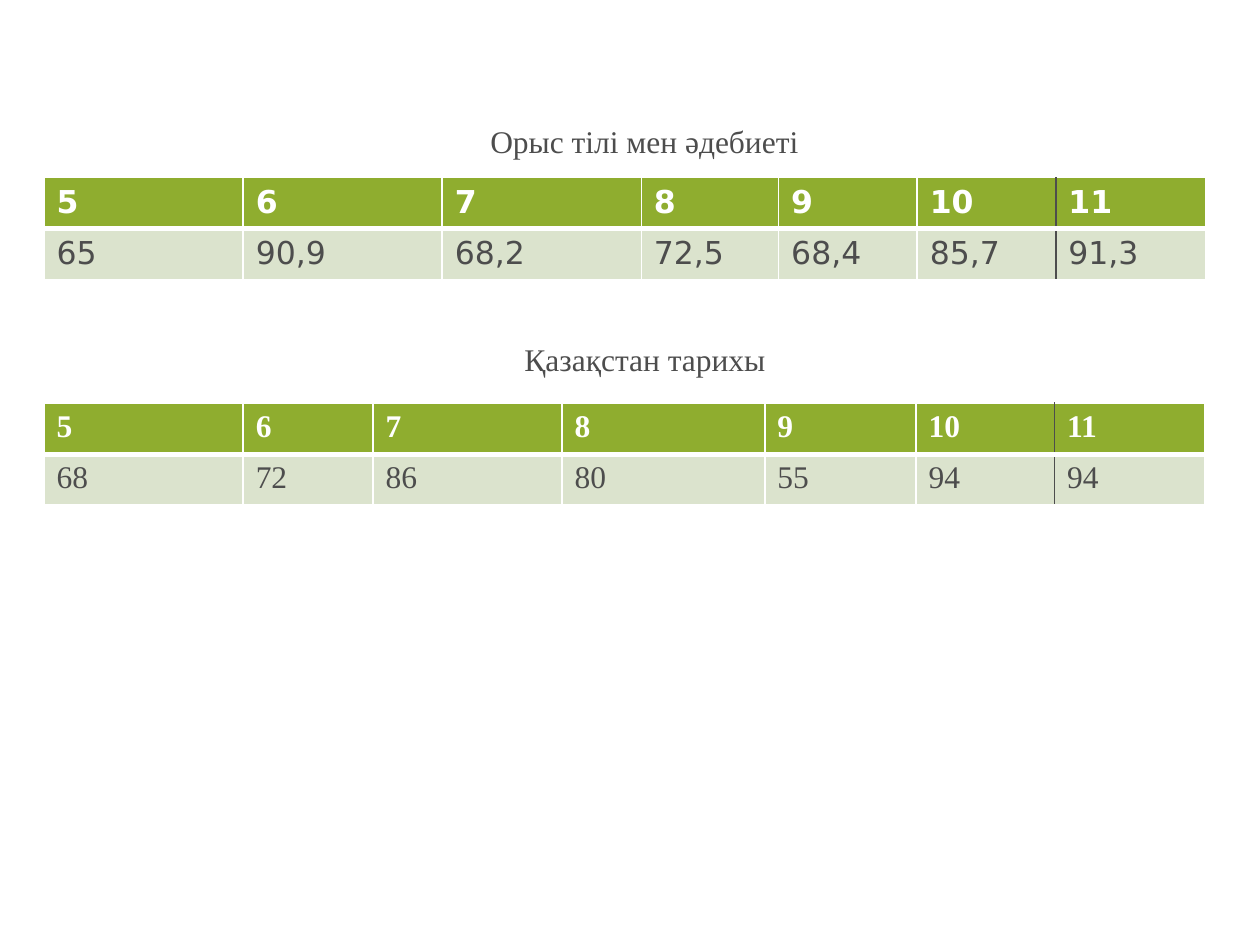
from pptx import Presentation
from pptx.dml.color import RGBColor
from pptx.enum.text import MSO_AUTO_SIZE, PP_ALIGN
from pptx.oxml.ns import qn
from pptx.util import Inches, Pt
from lxml import etree

CENTER = PP_ALIGN.CENTER
FIT_SHAPE = MSO_AUTO_SIZE.SHAPE_TO_FIT_TEXT
WHITE = RGBColor(0xFF, 0xFF, 0xFF)
GRAY = RGBColor(0x4D, 0x4D, 0x4D)
GREEN = RGBColor(0x8F, 0xAD, 0x2F)
PALE = RGBColor(0xDB, 0xE3, 0xCD)
SERIF = "Times New Roman"
SANS = "DejaVu Sans"

GRADES = ["5", "6", "7", "8", "9", "10", "11"]
SUBJECTS = [
    {
        "title": "Орыс тілі мен әдебиеті",
        "title_box": (3.58, 0.92, 3.07, 0.4),
        "top": 1.41,
        "font": SANS,
        "widths": [1.58, 1.58, 1.58, 1.09, 1.1, 1.1, 1.19],
        "scores": ["65", "90,9", "68,2", "72,5", "68,4", "85,7", "91,3"],
    },
    {
        "title": "Қазақстан тарихы",
        "title_box": (3.48, 2.65, 3.28, 0.4),
        "top": 3.2,
        "font": SERIF,
        "widths": [1.58, 1.03, 1.5, 1.61, 1.2, 1.1, 1.19],
        "scores": ["68", "72", "86", "80", "55", "94", "94"],
    },
]
ROW_STYLES = [
    {"fill": GREEN, "color": WHITE, "bold": True, "bottom": 3},
    {"fill": PALE, "color": GRAY, "bold": False, "bottom": 1},
]
LEFT, ROW_H = 0.35, 0.405


def add_text(tf, text, color, **font):
    r = tf.paragraphs[0].add_run()
    r.text = text
    r.font.color.rgb = color
    for name, value in {"size": Pt(18), **font}.items():
        setattr(r.font, name, value)


def set_border(cell, side, color, width):
    ln = etree.SubElement(cell._tc.get_or_add_tcPr(), qn(f"a:ln{side}"), w=str(Pt(width)))
    fill = etree.SubElement(ln, qn("a:solidFill"))
    etree.SubElement(fill, qn("a:srgbClr"), val=str(color))


def add_title(s, text, box):
    tf = s.shapes.add_textbox(*map(Inches, box)).text_frame
    tf.word_wrap = True
    tf.auto_size = FIT_SHAPE
    tf.paragraphs[0].alignment = CENTER
    add_text(tf, text, GRAY, name=SERIF)


def add_scores(s, subject):
    rows = [GRADES, subject["scores"]]
    widths = subject["widths"]
    last = len(widths) - 1
    table = s.shapes.add_table(
        len(rows), len(widths), Inches(LEFT), Inches(subject["top"]),
        Inches(sum(widths)), Inches(ROW_H * len(rows)),
    ).table
    for col, width in zip(table.columns, widths):
        col.width = Inches(width)
    for i, (row, style) in enumerate(zip(rows, ROW_STYLES)):
        table.rows[i].height = Inches(ROW_H)
        for j, text in enumerate(row):
            cell = table.cell(i, j)
            set_border(cell, "L", GRAY if j == last else WHITE, 1)
            set_border(cell, "R", GRAY if j == last - 1 else WHITE, 1)
            set_border(cell, "T", WHITE, 1)
            set_border(cell, "B", WHITE, style["bottom"])
            cell.fill.solid()
            cell.fill.fore_color.rgb = style["fill"]
            add_text(cell.text_frame, text, style["color"],
                     name=subject["font"], bold=style["bold"])


prs = Presentation()
prs.slide_width, prs.slide_height = Inches(10), Inches(7.5)
s = prs.slides.add_slide(prs.slide_layouts[6])
for subject in SUBJECTS:
    add_title(s, subject["title"], subject["title_box"])
    add_scores(s, subject)
prs.save("out.pptx")
